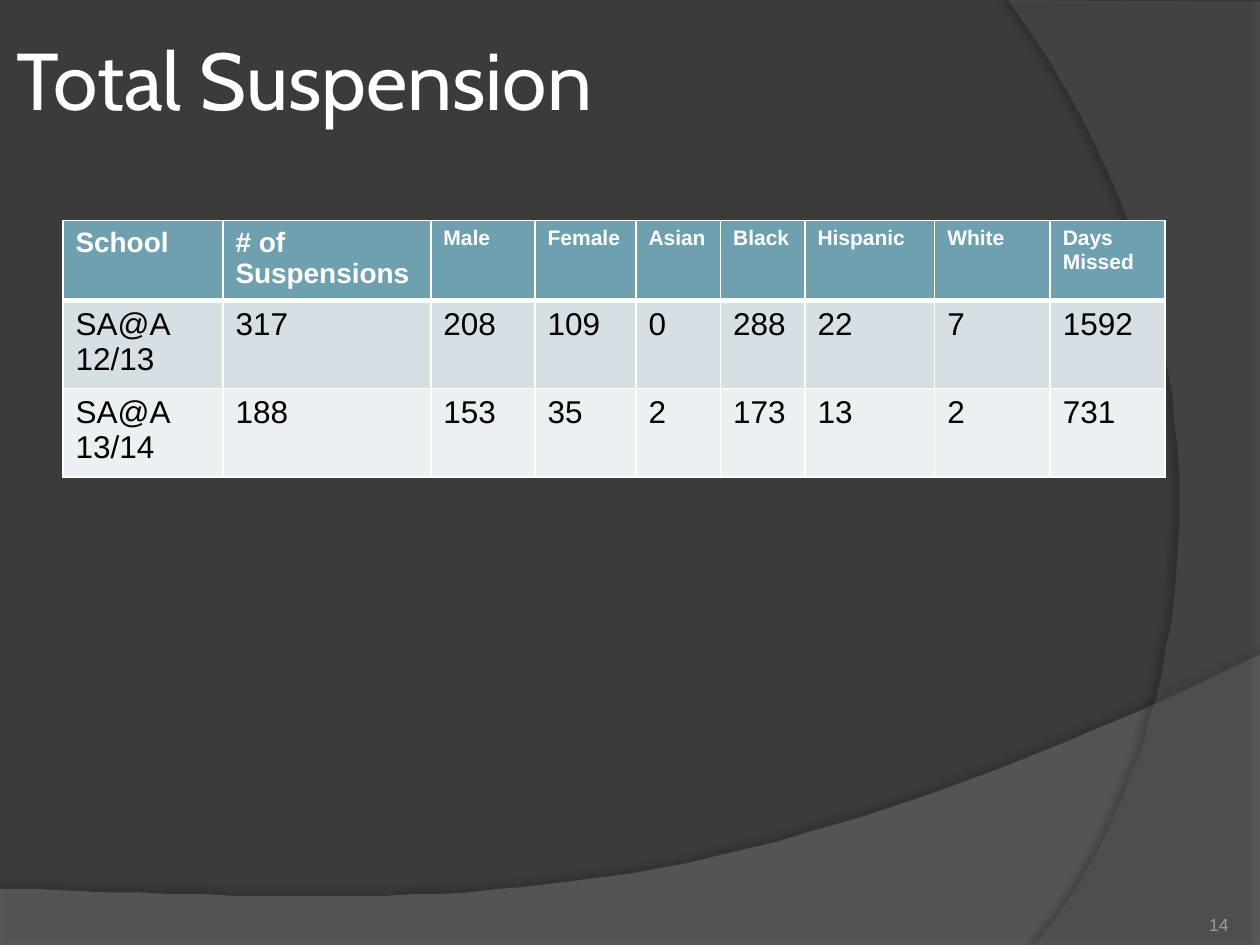
from lxml import etree
from pptx import Presentation
from pptx.dml.color import RGBColor
from pptx.enum.text import MSO_ANCHOR, PP_ALIGN
from pptx.oxml.ns import qn
from pptx.util import Pt

MIDDLE, BOTTOM = MSO_ANCHOR.MIDDLE, MSO_ANCHOR.BOTTOM
LEFT, RIGHT = PP_ALIGN.LEFT, PP_ALIGN.RIGHT
W, H = 720, 540
CURVE_STEPS = 40

COLORS = {
    "background": "3B3B3B",
    "wave": "7F7F7F",
    "arc": "5E5E5E",
    "shadow": "000000",
    "white": "FFFFFF",
    "black": "000000",
    "header": "6EA0B0",
    "odd": "D5DFE4",
    "even": "EBF0F2",
    "number": "9D9B9A",
}

COLUMNS = [91.4, 118.8, 59.6, 57.6, 48.4, 48.2, 74.2, 66, 65.6]
ROWS = [
    ["School", "# of Suspensions", "Male", "Female", "Asian", "Black",
     "Hispanic", "White", "Days\nMissed"],
    ["SA@A 12/13", "317", "208", "109", "0", "288", "22", "7", "1592"],
    ["SA@A 13/14", "188", "153", "35", "2", "173", "13", "2", "731"],
]


def rgb(name):
    return RGBColor.from_string(COLORS[name])


def add_color(parent, name, opacity=100):
    clr = etree.SubElement(parent, qn("a:srgbClr"), val=COLORS[name])
    etree.SubElement(clr, qn("a:alpha"), val=str(opacity * 1000))


def add_run(p, text, font, size, color, bold=False):
    r = p.add_run()
    r.text = text
    r.font.name = font
    r.font.size = Pt(size)
    r.font.bold = bold
    r.font.color.rgb = rgb(color)


def add_text(slide, box, text, font, size, color, anchor, align=LEFT, inset=0):
    tf = slide.shapes.add_textbox(*map(Pt, box)).text_frame
    tf.word_wrap = True
    tf.vertical_anchor = anchor
    tf.margin_left = tf.margin_right = Pt(inset)
    tf.margin_top = tf.margin_bottom = Pt(inset)
    p = tf.paragraphs[0]
    p.alignment = align
    add_run(p, text, font, size, color)


def bezier(*points):
    result = []
    for i in range(1, CURVE_STEPS + 1):
        t = i / CURVE_STEPS
        weights = (1 - t) ** 3, 3 * t * (1 - t) ** 2, 3 * t * t * (1 - t), t ** 3
        result.append(tuple(sum(w * pt[axis] for w, pt in zip(weights, points))
                            for axis in (0, 1)))
    return result


def add_band(slide, points, color, opacity, shade, distance, direction):
    fb = slide.shapes.build_freeform(*points[0], scale=Pt(1))
    fb.add_line_segments(points[1:], close=True)
    sp = fb.convert_to_shape()
    sp.line.fill.background()
    sp.fill.solid()
    sp.fill.fore_color.rgb = rgb(color)
    spPr = sp._element.spPr
    clr = spPr.find(qn("a:solidFill"))[0]
    etree.SubElement(clr, qn("a:alpha"), val=str(opacity * 1000))
    sp.shadow.inherit = False
    shadow = etree.SubElement(
        spPr.find(qn("a:effectLst")), qn("a:outerShdw"), blurRad=str(Pt(4)),
        dist=str(Pt(distance)), dir=str(direction * 60000), algn="ctr", rotWithShape="0")
    add_color(shadow, "shadow", shade)


def add_backdrop(slide, box):
    x, y, w, h = box
    right, bottom = x + w, y + h
    crest = (right, y + 374.4)
    wave = [(x, y + 507.6), (x, bottom), (right, bottom), crest]
    wave += bezier(crest, (x + 402.5, y + 524.9), (x + 281.5, y + 517.7), wave[0])
    add_band(slide, wave, "wave", 45, 35, 3.5, 270)

    foot = (x + 591.1, bottom)
    arc = [(right, y + 1.4), (right, bottom), foot]
    arc += bezier(foot, (x + 673.2, y + 445.7), (x + 733, y + 216), (x + 576, y))
    add_band(slide, arc, "arc", 40, 45, 4, 180)


def style_cell(cell, fill, top, bottom):
    tcPr = cell._tc.get_or_add_tcPr()
    for side, width in (("L", 1), ("R", 1), ("T", top), ("B", bottom)):
        ln = etree.SubElement(tcPr, qn(f"a:ln{side}"), w=str(Pt(width)))
        add_color(etree.SubElement(ln, qn("a:solidFill")), "white")
    cell.fill.solid()
    cell.fill.fore_color.rgb = rgb(fill)


def add_suspension_table(slide, box):
    table = slide.shapes.add_table(len(ROWS), len(COLUMNS), *map(Pt, box)).table
    for col, width in zip(table.columns, COLUMNS):
        col.width = Pt(width)
    for i, values in enumerate(ROWS):
        table.rows[i].height = Pt(box[3] / len(ROWS))
        header = i == 0
        fill = ("header", "odd", "even")[i]
        color = "white" if header else "black"
        for j, value in enumerate(values):
            cell = table.cell(i, j)
            style_cell(cell, fill, 3 if i == 1 else 1, 3 if header else 1)
            size = 18 if not header else 16 if j < 2 else 12
            tf = cell.text_frame
            for k, line in enumerate(value.split("\n")):
                p = tf.add_paragraph() if k else tf.paragraphs[0]
                add_run(p, line, "Arial", size, color, header)


def main():
    prs = Presentation()
    prs.slide_width, prs.slide_height = Pt(W), Pt(H)
    slide = prs.slides.add_slide(prs.slide_layouts[6])
    slide.background.fill.solid()
    slide.background.fill.fore_color.rgb = rgb("background")
    add_backdrop(slide, (0, 0, W, H))
    add_text(slide, (6, 0, 588, 90), "Total Suspension", "Cabin", 46, "white",
             MIDDLE, inset=3.6)
    add_suspension_table(slide, (36, 126, sum(COLUMNS), 88.2))
    add_text(slide, (642, 505.4, 60, 28.8), "14", "Arial", 10, "number", BOTTOM, RIGHT)
    prs.save("out.pptx")


if __name__ == "__main__":
    main()
